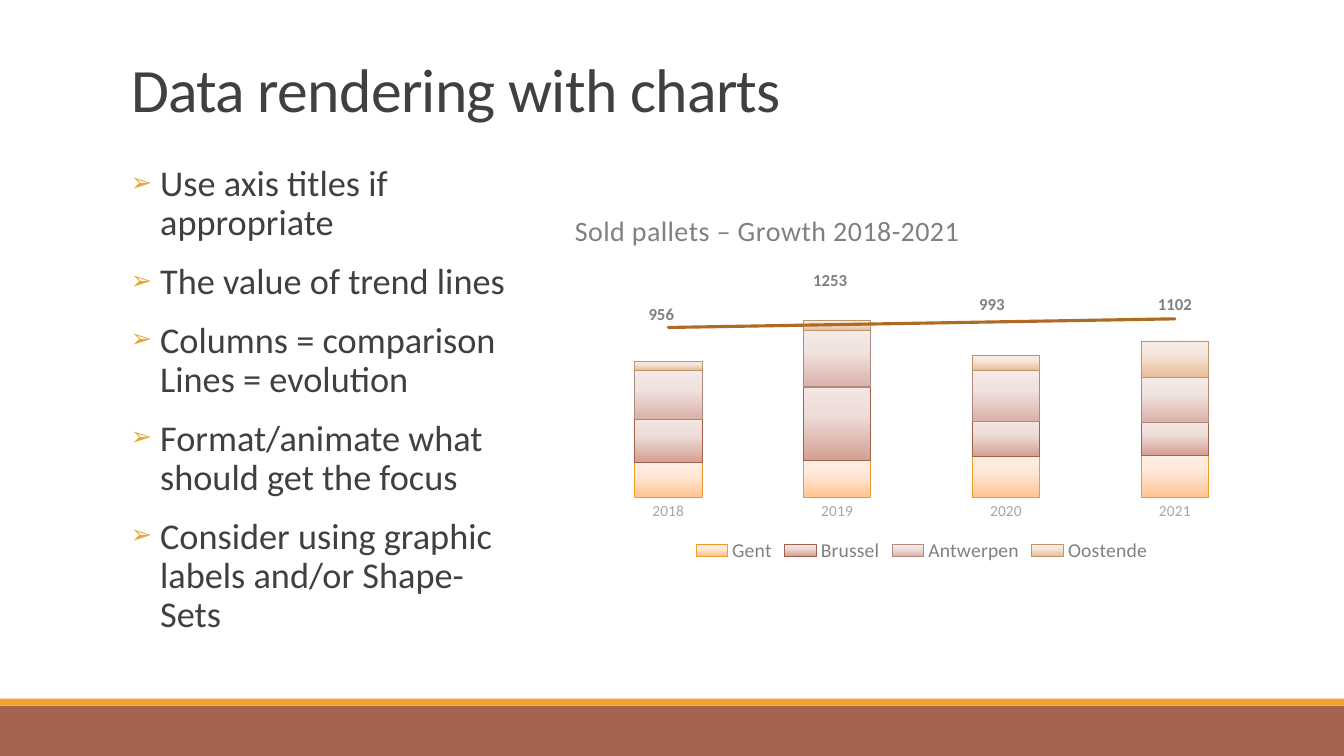
import copy

import lxml.etree
import pptx
import pptx.chart.data
import pptx.dml.color
import pptx.enum.chart
import pptx.enum.shapes
import pptx.enum.text
import pptx.oxml
import pptx.oxml.ns
import pptx.util

COLORS = {
    "band": "A5644E", "accent": "F0A22E", "text": "404040",
    "muted": "808080", "years": "A6A6A6", "trend": "AF6A25",
}
FONT = "Calibri"
TIPS = [
    "Use axis titles if appropriate",
    "The value of trend lines",
    "Columns = comparison Lines = evolution",
    "Format/animate what should get the focus",
    "Consider using graphic labels and/or Shape-Sets",
]
YEARS = ["2018", "2019", "2020", "2021"]
GRADIENT_STOPS = [0, 0.62, 1]
# City: pallets per year, gradient colours from bottom to top, outline
CITIES = {
    "Gent": ([250, 260, 290, 300], ["FFC390", "FFE7D7", "FFEEE2"], "EB9E2D"),
    "Brussel": ([300, 520, 250, 230], ["D59E92", "EDDCD8", "F2E6E3"], "A1624C"),
    "Antwerpen": ([350, 400, 360, 320], ["DAB1A8", "F0E2DF", "F4EAE8"], "B1887D"),
    "Oostende": ([60, 70, 100, 250], ["E9BD99", "F5E5DA", "F8EDE5"], "BF956B"),
}
TOTALS = [956, 1253, 993, 1102]
# Shift of a total's label, as shares of the chart's size
LABEL_SHIFTS = {0: (-0.01, -0.04), 1: (-0.01, 0), 2: (-0.02, -0.05)}


def rgb(color):
    return pptx.dml.color.RGBColor.from_string(color)


def set_all(target, formats):
    for name, value in formats.items():
        setattr(target, name, value)


def set_font(font, size, color, **formats):
    set_all(font, {"name": FONT, "size": pptx.util.Pt(size), **formats})
    font.color.rgb = rgb(COLORS[color])


def chart_xml(tag, content=""):
    """Parse one element in the chart namespace."""
    names = pptx.oxml.ns.nsdecls("c", "a")
    return pptx.oxml.parse_xml(f"<c:{tag} {names}>{content}</c:{tag}>")


def layout_xml(x, y, width=None, height=None):
    """Give a manual chart layout; without a size, only the place is set."""
    inner = "" if width is None else '<c:layoutTarget val="inner"/>'
    modes = "" if width is None else '<c:xMode val="edge"/><c:yMode val="edge"/>'
    size = "" if width is None else f'<c:w val="{width}"/><c:h val="{height}"/>'
    return chart_xml("layout", f'<c:manualLayout>{inner}{modes}<c:x val="{x}"/>'
                               f'<c:y val="{y}"/>{size}</c:manualLayout>')


class ChartSlide:
    """Holds the slide; boxes are left, top, width, height in percent of it."""

    def __init__(self, presentation):
        self.width = presentation.slide_width
        self.height = presentation.slide_height
        self.slide = presentation.slides.add_slide(presentation.slide_layouts[5])

    def place(self, box):
        sides = (self.width, self.height) * 2
        return [int(side * share / 100) for side, share in zip(sides, box)]

    def band(self, box, color):
        shape = self.slide.shapes.add_shape(
            pptx.enum.shapes.MSO_SHAPE.RECTANGLE, *self.place(box))
        shape.shadow.inherit = False
        shape.fill.solid()
        shape.fill.fore_color.rgb = rgb(COLORS[color])
        shape.line.fill.background()

    def title(self, box, text):
        title = self.slide.shapes.title
        set_all(title, dict(zip(("left", "top", "width", "height"), self.place(box))))
        set_all(title.text_frame, {
            "text": text, "word_wrap": True,
            "auto_size": pptx.enum.text.MSO_AUTO_SIZE.NONE,
            "vertical_anchor": pptx.enum.text.MSO_ANCHOR.BOTTOM})
        paragraph = title.text_frame.paragraphs[0]
        set_all(paragraph, {"alignment": pptx.enum.text.PP_ALIGN.LEFT,
                            "line_spacing": 0.85})
        set_font(paragraph.runs[0].font, 44, "text")
        paragraph.runs[0]._r.get_or_add_rPr().set("spc", "-50")

    def bullets(self, box, lines):
        frame = self.slide.shapes.add_textbox(*self.place(box)).text_frame
        frame.word_wrap = True
        frame.text = "\n".join(lines)
        indent = pptx.util.Inches(0.29)
        for index, paragraph in enumerate(frame.paragraphs):
            set_all(paragraph, {"line_spacing": 0.9,
                                "space_before": pptx.util.Pt(12 if index else 0),
                                "space_after": pptx.util.Pt(2)})
            properties = paragraph._p.get_or_add_pPr()
            properties.set("marL", str(indent))
            properties.set("indent", str(-indent))
            color = lxml.etree.SubElement(properties, pptx.oxml.ns.qn("a:buClr"))
            for parent, tag, name, value in (
                    (color, "a:srgbClr", "val", COLORS["accent"]),
                    (properties, "a:buSzPct", "val", "70000"),
                    (properties, "a:buFont", "typeface", FONT),
                    (properties, "a:buChar", "char", "➢")):
                lxml.etree.SubElement(parent, pptx.oxml.ns.qn(tag)).set(name, value)
            set_font(paragraph.runs[0].font, 25.9, "text")

    def sales_chart(self, box, title):
        data = pptx.chart.data.CategoryChartData()
        data.categories = YEARS
        for city, (pallets, _, _) in CITIES.items():
            data.add_series(city, pallets)
        data.add_series("Total", TOTALS)
        chart = self.slide.shapes.add_chart(
            pptx.enum.chart.XL_CHART_TYPE.COLUMN_STACKED,
            *self.place(box), data).chart
        set_font(chart.font, 10, "muted")
        self.chart_title(chart, title)
        self.axes(chart)
        self.columns(chart.plots[0])
        self.totals(chart)
        self.legend(chart)
        area = chart._chartSpace.chart.plotArea
        for layout in area.findall(pptx.oxml.ns.qn("c:layout")):
            area.remove(layout)
        area.insert(0, layout_xml(0.02, 0.18, 0.96, 0.63))

    def chart_title(self, chart, text):
        frame = chart.chart_title.text_frame
        frame.text = text
        run = frame.paragraphs[0].runs[0]
        set_font(run.font, 20, "muted", bold=False)
        run._r.get_or_add_rPr().set("spc", "20")
        element = chart.chart_title._element
        for layout in element.findall(pptx.oxml.ns.qn("c:layout")):
            element.remove(layout)
        layout = chart_xml("layout", '<c:manualLayout><c:xMode val="edge"/>'
                           '<c:yMode val="edge"/><c:x val="0"/>'
                           '<c:y val="0"/></c:manualLayout>')
        element.find(pptx.oxml.ns.qn("c:tx")).addnext(layout)

    def axes(self, chart):
        set_all(chart.value_axis, {
            "visible": False, "has_major_gridlines": False, "major_unit": 400,
            "minimum_scale": 0, "maximum_scale": 1600})
        chart.category_axis.major_tick_mark = pptx.enum.chart.XL_TICK_MARK.NONE
        chart.category_axis.format.line.fill.background()
        set_font(chart.category_axis.tick_labels.font, 11, "years")

    def columns(self, plot):
        set_all(plot, {"gap_width": 150, "overlap": 100, "vary_by_categories": False})
        for series, (_, colors, outline) in zip(plot.series, CITIES.values()):
            fill = series.format.fill
            fill.gradient()
            fill.gradient_angle = 90
            last = fill.gradient_stops[1]._gs
            last.addnext(copy.deepcopy(last))
            for stop, position, color in zip(fill.gradient_stops, GRADIENT_STOPS, colors):
                stop.position = position
                stop.color.rgb = rgb(color)
            series.format.line.color.rgb = rgb(outline)
            series.format.line.width = pptx.util.Pt(0.75)

    def totals(self, chart):
        """Move the totals to an unseen line on a second axis, with a trend line."""
        qn = pptx.oxml.ns.qn
        bars = chart.plots[0]._element
        element = bars.findall(qn("c:ser"))[-1]
        for tag in element.findall(qn("c:invertIfNegative")):
            element.remove(tag)
        line_chart = chart_xml("lineChart", '<c:grouping val="standard"/><c:varyColors val="0"/>'
                               '<c:marker val="1"/><c:axId val="5001"/><c:axId val="5002"/>')
        line_chart.insert(2, element)
        bars.addnext(line_chart)
        start = '<c:axId val="{}"/><c:scaling><c:orientation val="minMax"/>{}</c:scaling>'
        scale = '<c:max val="1400"/><c:min val="0"/>'
        end = ('<c:delete val="{}"/><c:axPos val="{}"/><c:majorTickMark val="{}"/>'
               '<c:minorTickMark val="none"/><c:tickLblPos val="none"/>'
               '<c:spPr><a:ln><a:noFill/></a:ln></c:spPr>'
               '<c:crossAx val="{}"/><c:crosses val="{}"/>')
        last_axis = chart.value_axis._element
        last_axis.addnext(chart_xml("valAx", start.format(5002, scale)
                                    + end.format(0, "r", "out", 5001, "max")))
        last_axis.addnext(chart_xml("catAx", start.format(5001, "")
                                    + end.format(1, "b", "none", 5002, "autoZero")))
        series = chart.plots[1].series[0]
        series.smooth = False
        series.format.line.fill.background()
        series.marker.style = pptx.enum.chart.XL_MARKER_STYLE.NONE
        above = pptx.enum.chart.XL_LABEL_POSITION.ABOVE
        set_all(series.data_labels, {"show_value": True, "position": above})
        set_font(series.data_labels.font, 12, "muted", bold=True)
        labels = element.find(qn("c:dLbls"))
        for leader in labels.findall(qn("c:showLeaderLines")):
            labels.remove(leader)
        labels.append(chart_xml("showLeaderLines"))
        labels[-1].set("val", "0")
        for index, shift in LABEL_SHIFTS.items():
            label = series.points[index].data_label
            set_font(label.font, 12, "muted", bold=True)
            label.position = above
            point = labels.findall(qn("c:dLbl"))[index]
            point.find(qn("c:idx")).addnext(layout_xml(*shift))
        element.find(qn("c:cat")).addprevious(chart_xml(
            "trendline", f'<c:spPr><a:ln w="{pptx.util.Pt(2.25)}" cap="rnd"><a:solidFill>'
            f'<a:srgbClr val="{COLORS["trend"]}"/></a:solidFill></a:ln></c:spPr>'
            '<c:trendlineType val="linear"/><c:dispRSqr val="0"/><c:dispEq val="0"/>'))

    def legend(self, chart):
        chart.has_legend = True
        set_all(chart.legend, {"include_in_layout": False,
                               "position": pptx.enum.chart.XL_LEGEND_POSITION.BOTTOM})
        set_font(chart.legend.font, 14, "muted")
        position = chart.legend._element.find(pptx.oxml.ns.qn("c:legendPos"))
        for index in (5, 4):
            position.addnext(chart_xml("legendEntry", f'<c:idx val="{index}"/><c:delete val="1"/>'))


def main():
    presentation = pptx.Presentation()
    set_all(presentation, {"slide_width": pptx.util.Inches(13.33),
                           "slide_height": pptx.util.Inches(7.5)})
    page = ChartSlide(presentation)
    page.band((0, 93.33, 100, 6.67), "band")
    page.band((0, 92.4, 100, 0.93), "accent")
    page.title((9, 4.13, 82.5, 13.07), "Data rendering with charts")
    page.bullets((9, 21.2, 30.2, 64.4), TIPS)
    page.sales_chart((42.4, 27.2, 52.35, 47.73), "Sold pallets – Growth 2018-2021")
    presentation.save("out.pptx")


if __name__ == "__main__":
    main()
